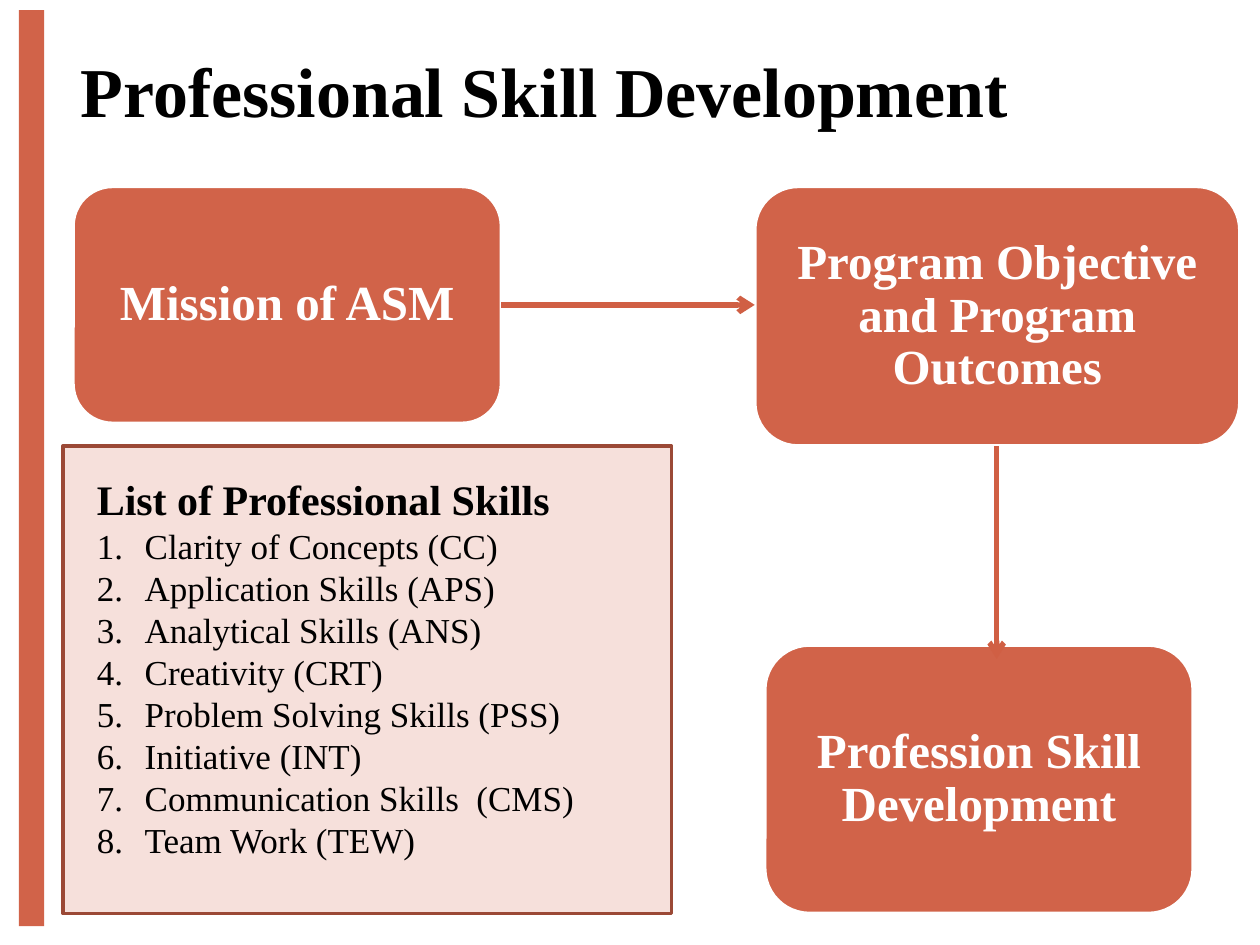
from lxml.etree import SubElement
from pptx import Presentation
from pptx.dml.color import RGBColor
from pptx.enum.shapes import MSO_CONNECTOR, MSO_SHAPE
from pptx.enum.text import MSO_ANCHOR, PP_ALIGN
from pptx.oxml.ns import qn
from pptx.util import Inches, Pt

theme = {
    "font": "Times New Roman",
    "rust": RGBColor.from_string("D16349"),
    "arrow": RGBColor.from_string("D05F44"),
    "edge": RGBColor.from_string("9B4936"),
    "pale": RGBColor.from_string("F6E0DB"),
    "white": RGBColor.from_string("FFFFFF"),
    "black": RGBColor.from_string("000000"),
    "title": Pt(40), "box": Pt(28), "head": Pt(24), "item": Pt(20),
}

deck = Presentation()
deck.slide_width, deck.slide_height = Inches(10), Inches(7.5)
slide = deck.slides.add_slide(deck.slide_layouts[6])


def block(kind, area, fill, edge=None):
    shape = slide.shapes.add_shape(kind, *map(Inches, area))
    shape.shadow.inherit = False
    shape.fill.solid()
    shape.fill.fore_color.rgb = theme[fill]
    if edge:
        shape.line.color.rgb = theme[edge]
        shape.line.width = Pt(2)
    else:
        shape.line.fill.background()
    return shape


def write(para, text, size, color, bold=True, **form):
    run = para.add_run()
    run.text = text
    run.font.color.rgb = theme[color]
    looks = {"name": theme["font"], "size": theme[size], "bold": bold}
    for target, values in ((run.font, looks), (para, form)):
        for key, value in values.items():
            setattr(target, key, value)


block(MSO_SHAPE.RECTANGLE, (0.15, 0.08, 0.2, 7.27), "rust")

steps = [
    ("Mission of ASM", (0.58, 1.48, 3.4, 1.88)),
    ("Program Objective and Program Outcomes", (5.99, 1.48, 3.85, 2.06)),
    ("Profession Skill Development", (6.07, 5.12, 3.4, 2.13)),
]
for text, area in steps:
    frame = block(MSO_SHAPE.ROUNDED_RECTANGLE, area, "rust", "white").text_frame
    frame.word_wrap = True
    frame.vertical_anchor = MSO_ANCHOR.MIDDLE
    write(frame.paragraphs[0], text, "box", "white",
          alignment=PP_ALIGN.CENTER, line_spacing=0.9)

for ends in ((3.98, 2.42, 5.99, 2.42), (7.91, 3.54, 7.91, 5.23)):
    link = slide.shapes.add_connector(MSO_CONNECTOR.STRAIGHT, *map(Inches, ends))
    link.line.color.rgb = theme["arrow"]
    link.line.width = Pt(3)
    SubElement(link.line._get_or_add_ln(), qn("a:tailEnd"), type="arrow")
    SubElement(link._element.spPr, qn("a:effectLst"))

block(MSO_SHAPE.RECTANGLE, (0.5, 3.54, 4.83, 3.71), "pale", "edge")

skills = [
    "Clarity of Concepts (CC)",
    "Application Skills (APS)",
    "Analytical Skills (ANS)",
    "Creativity (CRT)",
    "Problem Solving Skills (PSS)",
    "Initiative (INT)",
    "Communication Skills  (CMS)",
    "Team Work (TEW)",
]
frame = slide.shapes.add_textbox(*map(Inches, (0.67, 3.67, 4.5, 3.5))).text_frame
frame.word_wrap = True
frame.margin_top = Inches(0.09)
write(frame.paragraphs[0], "List of Professional Skills", "head", "black")
for skill in skills:
    para = frame.add_paragraph()
    props = para._p.get_or_add_pPr()
    props.set("marL", str(Inches(0.38)))
    props.set("indent", str(-Inches(0.38)))
    SubElement(props, qn("a:buFont"), typeface=theme["font"])
    SubElement(props, qn("a:buAutoNum"), type="arabicPeriod")
    write(para, skill, "item", "black", bold=False, line_spacing=Pt(24))

frame = slide.shapes.add_textbox(*map(Inches, (0.17, 0.26, 8.3, 0.67))).text_frame
frame.word_wrap = True
frame.margin_top = Inches(0.12)
write(frame.paragraphs[0], "Professional Skill Development", "title", "black",
      alignment=PP_ALIGN.CENTER)

deck.save("out.pptx")
